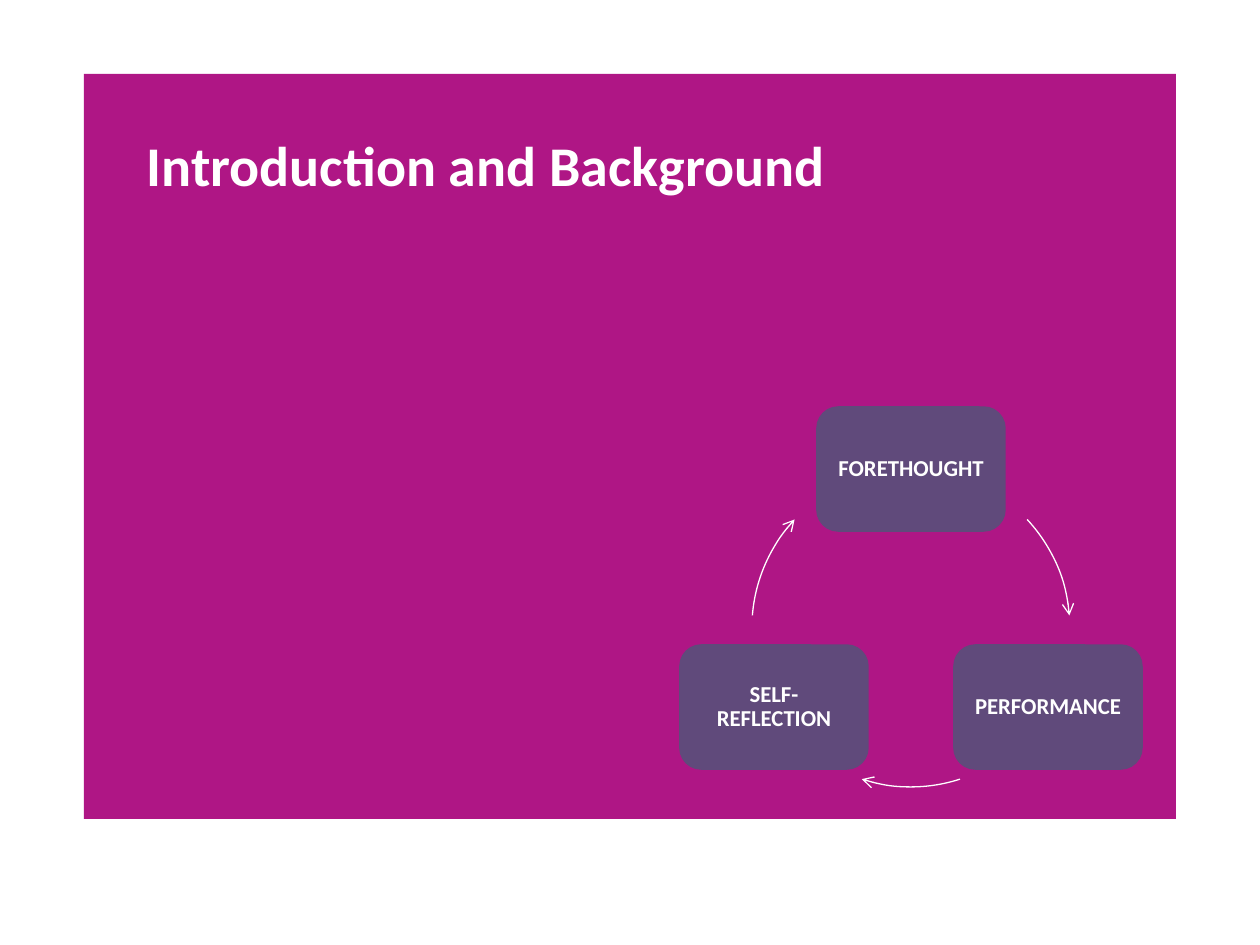
from dataclasses import dataclass

from lxml import etree
from pptx import Presentation
from pptx import util as u
from pptx.dml.color import RGBColor
from pptx.enum import shapes, text
from pptx.oxml.ns import qn

WHITE = RGBColor(0xFF, 0xFF, 0xFF)
PINK = RGBColor(0xAF, 0x16, 0x85)
PLUM = RGBColor(0x60, 0x4A, 0x7B)
FONT = "Calibri"
SCALE = u.Inches(1) / 126  # EMU per px

# Circle that the arrows follow
RING_X, RING_Y, RING_D = 752, 469, 318
BOX_W, BOX_H = 186, 122


@dataclass
class Stage:
    name: str
    left: int
    top: int


@dataclass
class Arc:
    start: float  # degrees, clockwise from the right
    end: float


STAGES = [
    Stage("FORETHOUGHT", 818, 408),
    Stage("PERFORMANCE", 955, 646),
    Stage("SELF-REFLECTION", 681, 646),
]
ARCS = [Arc(317, 355.5), Arc(72, 108), Arc(184.5, 223)]


def px(n: int) -> u.Emu:
    return u.Emu(round(n * SCALE))


def add_shape(slide, kind, left: int, top: int, width: int, height: int):
    shape = slide.shapes.add_shape(kind, px(left), px(top), px(width), px(height))
    shape.shadow.inherit = False
    return shape


def add_run(para, words: str, size: int) -> None:
    run = para.add_run()
    run.text = words
    font = run.font
    font.name, font.size, font.bold = FONT, u.Pt(size), True
    font.color.rgb = WHITE


def draw_stage(slide, stage: Stage) -> None:
    box = add_shape(slide, shapes.MSO_SHAPE.ROUNDED_RECTANGLE,
                    stage.left, stage.top, BOX_W, BOX_H)
    box.fill.solid()
    box.fill.fore_color.rgb = PLUM
    box.line.color.rgb = PLUM
    box.line.width = u.Pt(2)
    frame = box.text_frame
    frame.word_wrap = True
    frame.vertical_anchor = text.MSO_ANCHOR.MIDDLE
    frame.margin_left = frame.margin_right = px(12)
    frame.margin_top = frame.margin_bottom = px(12)
    para = frame.paragraphs[0]
    para.alignment = text.PP_ALIGN.CENTER
    para.line_spacing = 0.9
    add_run(para, stage.name, 13)


def draw_arc(slide, arc: Arc) -> None:
    curve = add_shape(slide, shapes.MSO_SHAPE.ARC, RING_X, RING_Y, RING_D, RING_D)
    # Angles are stored in 60000ths of a degree, adjustments in 100000ths
    curve.adjustments[0] = arc.start * 0.6
    curve.adjustments[1] = arc.end * 0.6
    curve.fill.background()
    curve.line.color.rgb = WHITE
    curve.line.width = u.Pt(0.75)
    line = curve.line._get_or_add_ln()
    etree.SubElement(line, qn("a:tailEnd"), type="arrow")


def draw_title(slide, words: str) -> None:
    title = slide.shapes.title
    title.left, title.top, title.width, title.height = map(px, (134, 124, 992, 81))
    frame = title.text_frame
    frame.word_wrap = True
    frame.auto_size = text.MSO_AUTO_SIZE.NONE
    frame.vertical_anchor = text.MSO_ANCHOR.TOP
    para = frame.paragraphs[0]
    para.alignment = text.PP_ALIGN.LEFT
    add_run(para, words, 32)


def main() -> None:
    deck = Presentation()
    deck.slide_width, deck.slide_height = u.Inches(10), u.Inches(7.5)
    slide = deck.slides.add_slide(deck.slide_layouts[5])

    # Coloured panel, sent behind the title
    panel = add_shape(slide, shapes.MSO_SHAPE.RECTANGLE, 84, 74, 1092, 745)
    panel.fill.solid()
    panel.fill.fore_color.rgb = PINK
    panel.line.fill.background()
    slide.shapes.title._element.addprevious(panel._element)

    draw_title(slide, "Introduction and Background")

    # Learning cycle
    for stage, arc in zip(STAGES, ARCS):
        draw_stage(slide, stage)
        draw_arc(slide, arc)

    deck.save("out.pptx")


if __name__ == "__main__":
    main()
